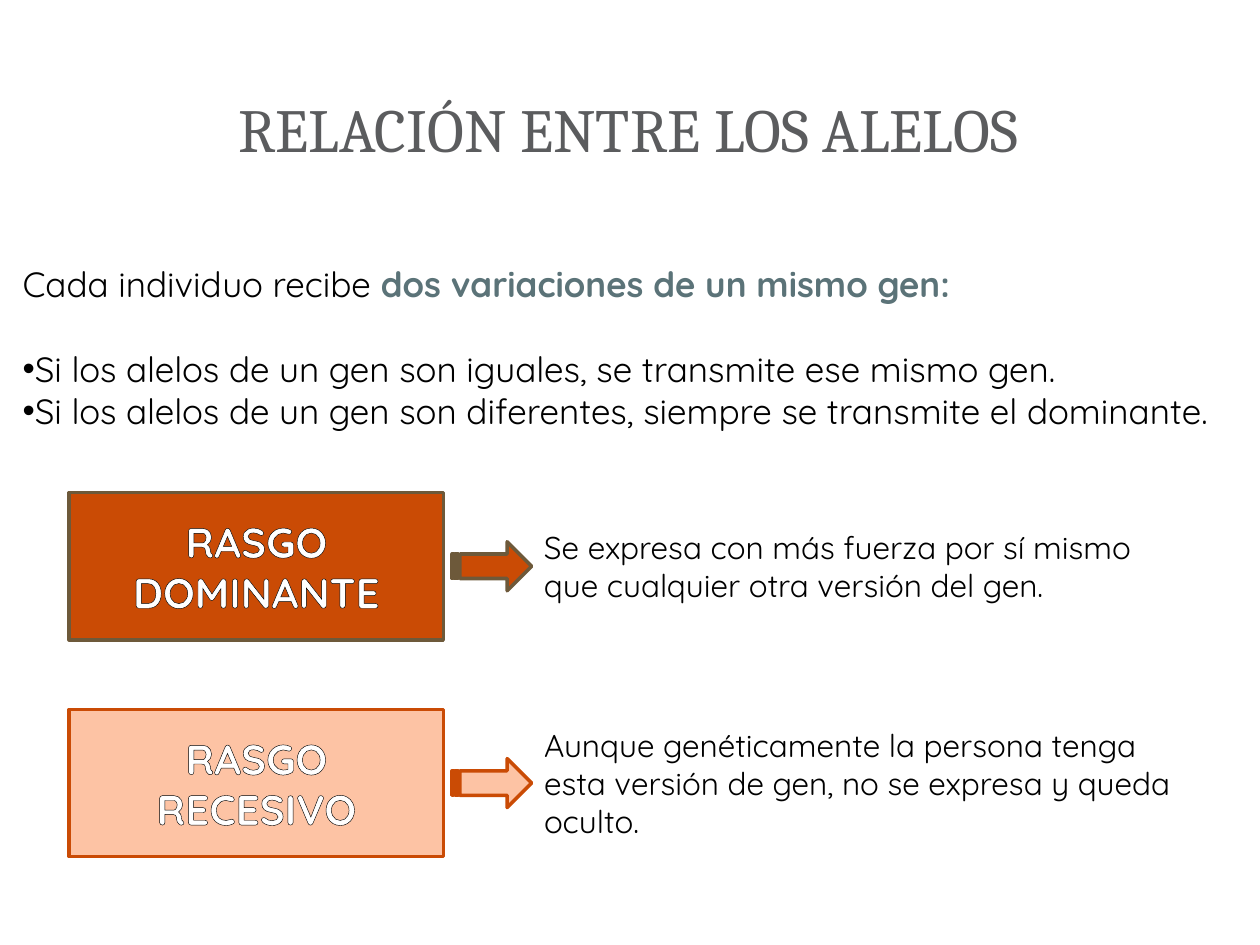
from lxml.etree import SubElement
from pptx import Presentation
from pptx.dml.color import RGBColor
from pptx.enum.shapes import MSO_SHAPE as Shape
from pptx.enum.text import MSO_ANCHOR as Anchor, PP_ALIGN as Align
from pptx.oxml import parse_xml
from pptx.oxml.ns import nsdecls, qn
from pptx.util import Pt

BODY = {"name": "Quicksand", "size": Pt(20), "color": "000000"}
DETAIL = {**BODY, "size": Pt(18)}
ACCENT = {**BODY, "color": "5B7378", "bold": True}
LABEL = {**BODY, "size": Pt(24), "color": "FFFFFF", "bold": True}
TITLE = {"name": "Cambria", "size": Pt(35), "color": "5B5C5E"}


def paint(target, color):
    """Give a fill a solid colour from a hex string."""
    target.solid()
    target.fore_color.rgb = RGBColor.from_string(color)


def add_span(para, text, style):
    """Append a formatted run to a paragraph and return it."""
    span = para.add_run()
    span.text = text
    for key, value in style.items():
        if key == "color":
            paint(span.font.fill, value)
        else:
            setattr(span.font, key, value)
    return span


def add_text(page, box, anchor=Anchor.TOP):
    """Place a wrapping text box and return its frame."""
    frame = page.shapes.add_textbox(*map(Pt, box)).text_frame
    frame.word_wrap = True
    frame.vertical_anchor = anchor
    return frame


def add_block(page, kind, box, fill, line):
    """Place a filled, outlined preset shape."""
    block = page.shapes.add_shape(kind, *map(Pt, box))
    block.shadow.inherit = False
    paint(block.fill, fill)
    paint(block.line.fill, line)
    block.line.width = Pt(2)
    return block


def add_bullet(para):
    """Put a round bullet directly before a paragraph's text."""
    props = para._p.get_or_add_pPr()
    props.set("marL", "0")
    props.set("indent", "0")
    SubElement(props, qn("a:buFont"), typeface="Arial")
    SubElement(props, qn("a:buChar"), char="•")


def outline_text(span):
    """Draw a thin black contour around a run's letters."""
    span.font._element.insert(0, parse_xml(
        f'<a:ln {nsdecls("a")} w="3175"><a:solidFill>'
        '<a:srgbClr val="000000"/></a:solidFill></a:ln>'))


def add_title(page, box, text):
    """Place the centred slide title."""
    para = add_text(page, box, Anchor.MIDDLE).paragraphs[0]
    para.alignment = Align.CENTER
    add_span(para, text, TITLE)


def add_intro(page, box, lead, accent, points):
    """Place the lead sentence and the bullet points under it."""
    frame = add_text(page, box)
    add_span(frame.paragraphs[0], lead, BODY)
    add_span(frame.paragraphs[0], accent, ACCENT)
    for index, point in enumerate(points):
        para = frame.add_paragraph()
        para.space_before = Pt(0 if index else 25)
        add_bullet(para)
        add_span(para, point, BODY)


def add_trait(page, box, label, detail, fill, line):
    """Place a trait row: label block, striped arrow and explanation."""
    left, top, width, height = box
    block_width, gap, arrow_width, arrow_height = 213.8, 5, 45.4, 28
    block = add_block(page, Shape.RECTANGLE,
                      (left, top, block_width, height), fill, line)
    frame = block.text_frame
    frame.word_wrap = True
    frame.vertical_anchor = Anchor.MIDDLE
    frame.margin_left = frame.margin_right = Pt(10)
    para = frame.paragraphs[0]
    para.alignment = Align.CENTER
    outline_text(add_span(para, label, LABEL))

    arrow_left = left + block_width + gap
    add_block(page, Shape.STRIPED_RIGHT_ARROW,
              (arrow_left, top + (height - arrow_height) / 2,
               arrow_width, arrow_height), fill, line)
    text_left = arrow_left + arrow_width
    frame = add_text(page, (text_left, top, left + width - text_left, height),
                     Anchor.MIDDLE)
    add_span(frame.paragraphs[0], detail, DETAIL)


def main():
    """Build the slide on the relation between alleles."""
    deck = Presentation()
    deck.slide_width, deck.slide_height = Pt(720), Pt(540)
    page = deck.slides.add_slide(deck.slide_layouts[6])
    add_title(page, (34, 32.4, 650, 82), "RELACIÓN ENTRE LOS ALELOS")
    add_intro(page, (5.8, 146.2, 736.6, 104.4),
              "Cada individuo recibe ", "dos variaciones de un mismo gen:",
              ["Si los alelos de un gen son iguales, se transmite ese mismo gen.",
               "Si los alelos de un gen son diferentes, siempre se transmite "
               "el dominante."])
    add_trait(page, (39.6, 281.5, 635.7, 84.2), "RASGO DOMINANTE",
              "Se expresa con más fuerza por sí mismo que cualquier otra "
              "versión del gen.", "CA4B05", "6D593A")
    add_trait(page, (39.6, 405.4, 646.5, 84.2), "RASGO RECESIVO",
              "Aunque genéticamente la persona tenga esta versión de gen, "
              "no se expresa y queda oculto.", "FDC3A4", "CA4B05")
    deck.save("out.pptx")


if __name__ == "__main__":
    main()
